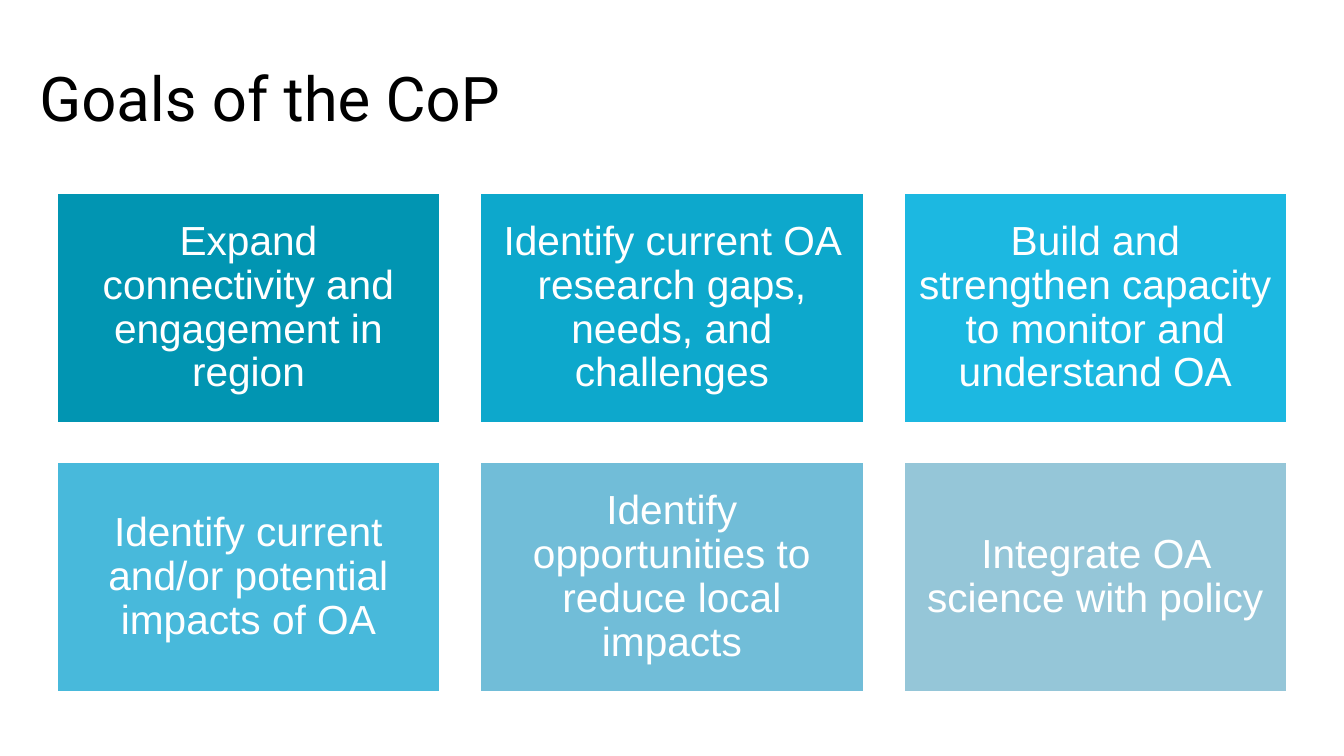
from dataclasses import dataclass

import pptx
import pptx.dml.color
import pptx.enum.shapes
import pptx.enum.text
import pptx.slide
import pptx.text.text
import pptx.util

Inches = pptx.util.Inches
Pt = pptx.util.Pt

COLUMNS = 3
LEFT, TOP = 0.56, 1.91
WIDTH, HEIGHT = 3.81, 2.29
COLUMN_STEP, ROW_STEP = 4.2, 2.67


@dataclass
class Goal:
    text: str
    fill: str


GOALS = [
    Goal("Expand connectivity and engagement in region", "0195B2"),
    Goal("Identify current OA research gaps, needs, and challenges", "0DA8CC"),
    Goal("Build and strengthen capacity to monitor and understand OA", "1CB8E1"),
    Goal("Identify current and/or potential impacts of OA", "48B9DB"),
    Goal("Identify opportunities to reduce local impacts", "71BDD8"),
    Goal("Integrate OA science with policy", "95C6D8"),
]


def color(value: str) -> pptx.dml.color.RGBColor:
    return pptx.dml.color.RGBColor.from_string(value)


def write_text(frame: pptx.text.text.TextFrame, text: str, font_name: str, size: float,
               font_color: str, alignment: pptx.enum.text.PP_ALIGN,
               margin_x: float, margin_y: float) -> None:
    frame.text = text
    frame.word_wrap = True
    frame.auto_size = pptx.enum.text.MSO_AUTO_SIZE.NONE
    frame.vertical_anchor = pptx.enum.text.MSO_ANCHOR.MIDDLE
    frame.margin_left = frame.margin_right = Inches(margin_x)
    frame.margin_top = frame.margin_bottom = Inches(margin_y)
    paragraph = frame.paragraphs[0]
    paragraph.alignment = alignment
    paragraph.line_spacing = 0.9
    font = paragraph.runs[0].font
    font.name = font_name
    font.size = Pt(size)
    font.color.rgb = color(font_color)


def add_title(slide: pptx.slide.Slide, text: str) -> None:
    title = slide.shapes.title
    title.left, title.top = Inches(0.29), Inches(0.28)
    title.width, title.height = Inches(12.75), Inches(1.45)
    write_text(title.text_frame, text, "Roboto", 44, "000000",
               pptx.enum.text.PP_ALIGN.LEFT, 0.1, 0.05)


def add_goal(slide: pptx.slide.Slide, goal: Goal, index: int) -> None:
    row, column = divmod(index, COLUMNS)
    shape = slide.shapes.add_shape(
        pptx.enum.shapes.MSO_SHAPE.RECTANGLE,
        Inches(LEFT + column * COLUMN_STEP), Inches(TOP + row * ROW_STEP),
        Inches(WIDTH), Inches(HEIGHT))
    shape.shadow.inherit = False
    shape.fill.solid()
    shape.fill.fore_color.rgb = color(goal.fill)
    shape.line.color.rgb = color("FFFFFF")
    shape.line.width = Pt(2)
    write_text(shape.text_frame, goal.text, "Arial", 29, "FFFFFF",
               pptx.enum.text.PP_ALIGN.CENTER, 0.12, 0.12)


def main() -> None:
    presentation = pptx.Presentation()
    presentation.slide_width = Inches(13.33)
    presentation.slide_height = Inches(7.5)
    slide = presentation.slides.add_slide(presentation.slide_layouts.get_by_name("Title Only"))
    add_title(slide, "Goals of the CoP")
    for index, goal in enumerate(GOALS):
        add_goal(slide, goal, index)
    presentation.save("out.pptx")


if __name__ == "__main__":
    main()
